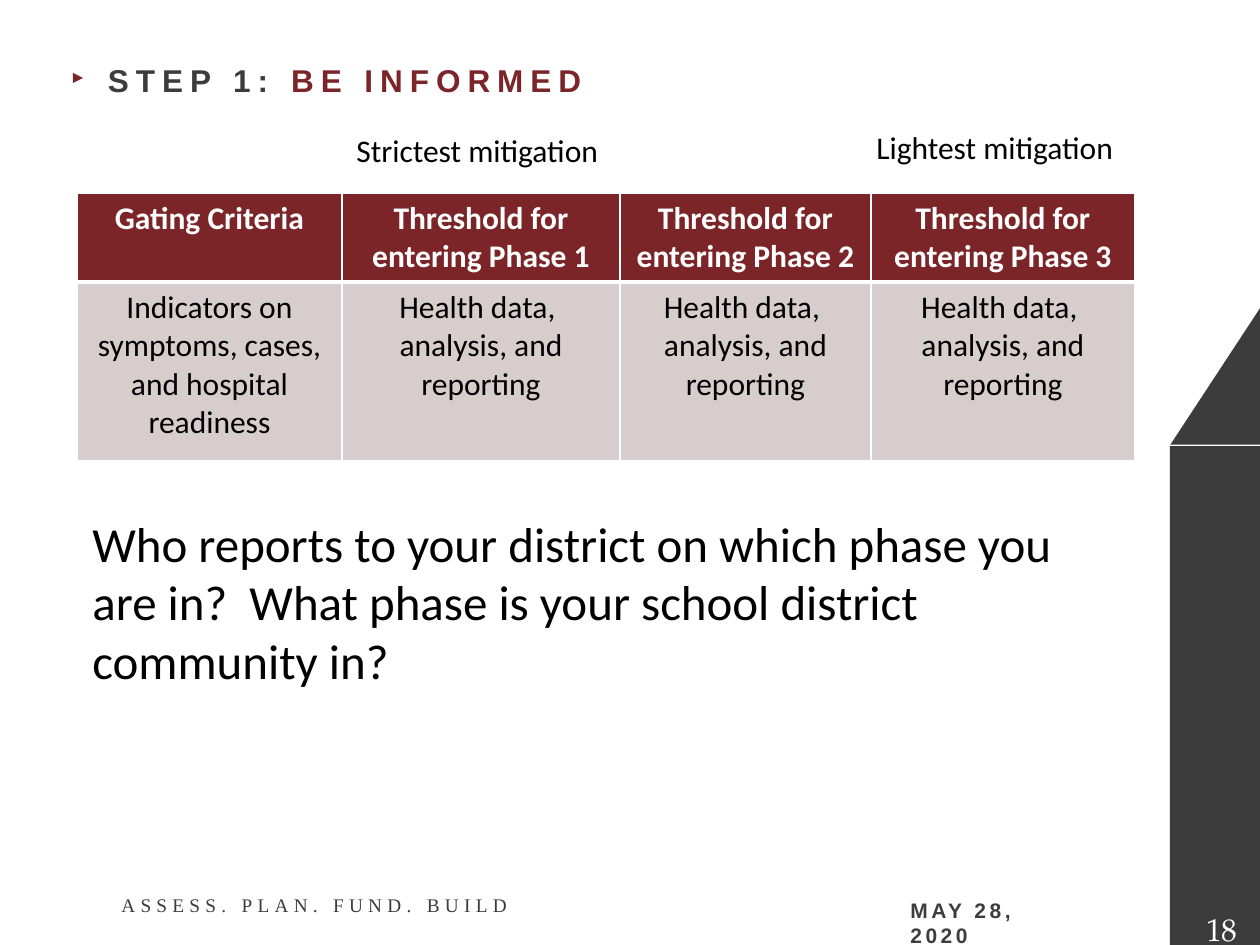
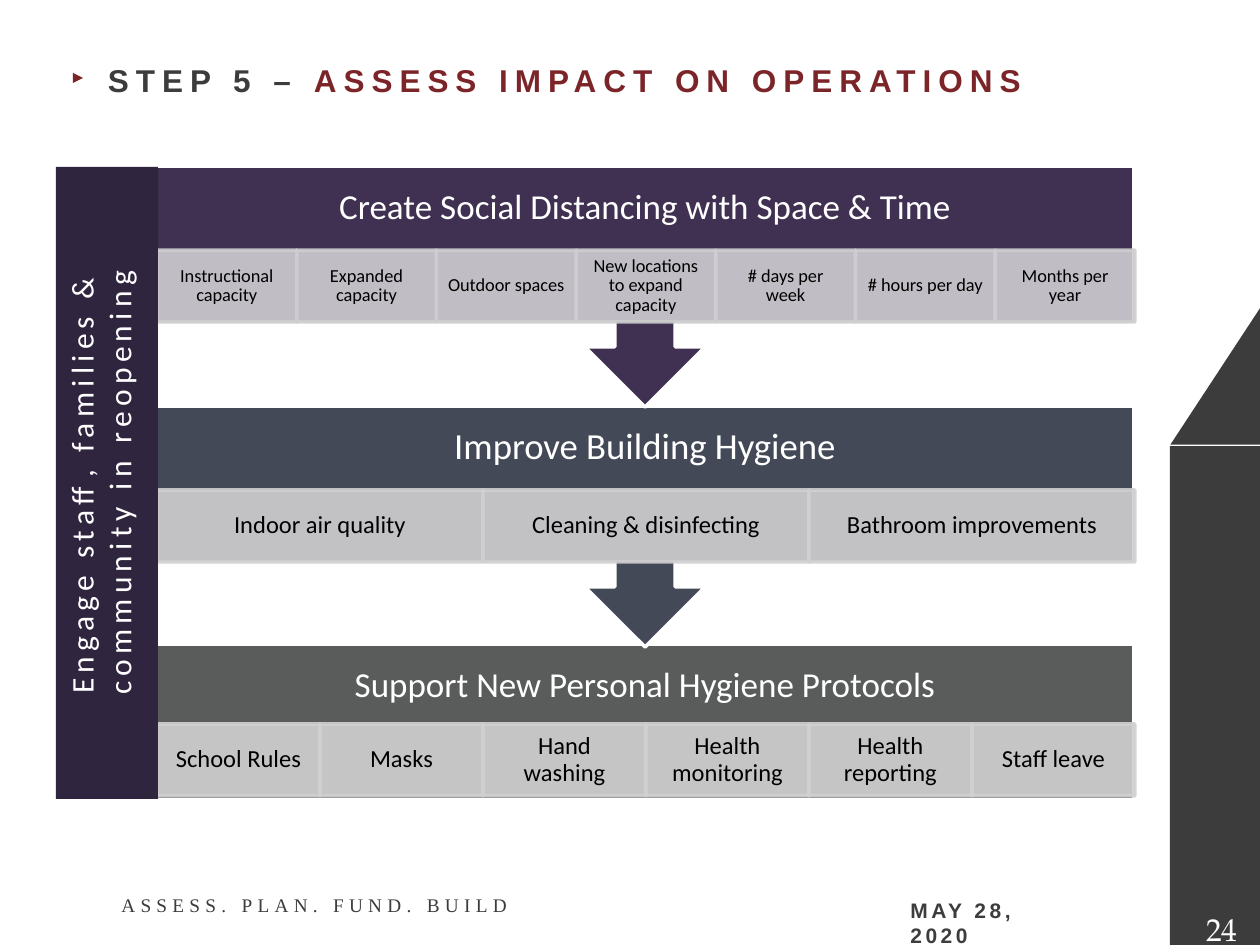
from dataclasses import dataclass

from lxml import etree
from pptx import Presentation
from pptx import util as u
from pptx.dml.color import RGBColor
from pptx.enum import shapes, text
from pptx.oxml import ns

PX_PER_INCH = 126
Shape = shapes.MSO_SHAPE
Align = text.PP_ALIGN
Anchor = text.MSO_ANCHOR


@dataclass(frozen=True)
class Theme:
    charcoal: str = "3D3C3D"
    date_grey: str = "3C3D3C"
    maroon: str = "7C2529"
    blush: str = "D7CDCD"
    white: str = "FFFFFF"
    black: str = "000000"
    aubergine: str = "30253E"
    purple: str = "403152"
    slate: str = "444958"
    grey: str = "5A5B5B"
    heading_font: str = "Arial"
    body_font: str = "Calibri"
    footer_font: str = "Times New Roman"
    number_font: str = "TeX Gyre Pagella"
    motto_size: float = 11
    date_size: float = 12
    body_size: float = 18
    question_size: float = 28


THEME = Theme()


@dataclass(frozen=True)
class Style:
    size: float = THEME.body_size
    color: str = THEME.black
    font: str = THEME.body_font
    bold: bool = False
    tracking: int = 0  # points between letters


@dataclass(frozen=True)
class Stage:
    heading: str
    heading_size: float
    color: str
    top: int
    height: int
    cells_offset: int
    cell_color: str
    cell_size: float
    cell_inset: int
    cells: tuple
    leads_on: bool = True


STAGES = (
    Stage("Create Social Distancing with Space & Time", 20, THEME.purple,
          166, 241, 84, "CECED1", 10.5, 11,
          ("Instructional capacity", "Expanded capacity", "Outdoor spaces",
           "New locations to expand capacity", "# days per week",
           "# hours per day", "Months per year")),
    Stage("Improve Building Hygiene", 21, THEME.slate,
          406, 241, 84, "D0D0D1", 14, 14,
          ("Indoor air quality", "Cleaning & disinfecting",
           "Bathroom improvements")),
    Stage("Support New Personal Hygiene Protocols", 20, THEME.grey,
          644, 156, 80, "D1D1D1", 14, 14,
          ("School Rules", "Masks", "Hand washing", "Health monitoring",
           "Health reporting", "Staff leave"), leads_on=False),
)


def px(length):
    return u.Emu(round(length * 914400 / PX_PER_INCH))


def rgb(color):
    return RGBColor.from_string(color)


def add_run(paragraph, words, style):
    run = paragraph.add_run()
    run.text = words
    font = run.font
    font.size = u.Pt(style.size)
    font.name = style.font
    font.bold = style.bold
    font.color.rgb = rgb(style.color)
    if style.tracking:
        font._element.set("spc", str(style.tracking * 100))


def write(frame, runs, align=Align.LEFT, anchor=Anchor.TOP, insets=None,
          wrap=True, spacing=None):
    """Fill a frame with one paragraph of (words, style) runs."""
    frame.word_wrap = wrap
    frame.vertical_anchor = anchor
    if insets:
        across, down = insets
        frame.margin_left = frame.margin_right = px(across)
        frame.margin_top = frame.margin_bottom = px(down)
    paragraph = frame.paragraphs[0]
    paragraph.alignment = align
    if spacing:
        paragraph.line_spacing = spacing
    for words, style in runs:
        add_run(paragraph, words, style)


def add_text(slide, box, runs, **layout):
    label = slide.shapes.add_textbox(*map(px, box))
    write(label.text_frame, runs, **layout)


def add_block(slide, kind, box, color, line=None, rotation=0, opacity=None):
    block = slide.shapes.add_shape(kind, *map(px, box))
    block.shadow.inherit = False
    block.rotation = rotation
    block.fill.solid()
    block.fill.fore_color.rgb = rgb(color)
    if line:
        block.line.color.rgb = rgb(line)
        block.line.width = u.Pt(2)
    else:
        block.line.fill.background()
    if opacity:
        for tint in block._element.spPr.iter(ns.qn("a:srgbClr")):
            etree.SubElement(tint, ns.qn("a:alpha"), val=str(opacity * 1000))
    return block


def add_frame(slide, step, topic, number):
    """Draw the band, footer and heading that the slides share."""
    # Side band
    add_block(slide, Shape.RECTANGLE, (1170, 446, 90, 499), THEME.charcoal)
    add_block(slide, Shape.RIGHT_TRIANGLE, (1147, 331, 137, 90),
              THEME.charcoal, rotation=270)
    # Footer
    motto = Style(THEME.motto_size, THEME.charcoal, THEME.footer_font,
                  tracking=3)
    add_text(slide, (109, 887, 431, 36),
             [("ASSESS. PLAN. FUND. BUILD", motto)])
    date = Style(THEME.date_size, THEME.date_grey, THEME.heading_font, True, 2)
    add_text(slide, (898, 891, 188, 37), [("MAY 28, 2020", date)])
    page = Style(color=THEME.white, font=THEME.number_font)
    add_text(slide, (1187, 903, 63, 51), [(number, page)],
             align=Align.RIGHT, anchor=Anchor.MIDDLE)
    # Heading
    add_block(slide, Shape.ISOSCELES_TRIANGLE, (73, 73, 10, 10),
              THEME.maroon, rotation=90)
    heading = [(words, Style(color=color, font=THEME.heading_font,
                             bold=True, tracking=4))
               for words, color in ((step, THEME.charcoal),
                                    (topic, THEME.maroon))]
    add_text(slide, (95, 52, 1124, 73), heading, insets=(13, 9))


def set_borders(cell, bottom):
    properties = cell._tc.get_or_add_tcPr()
    widths = {"lnL": 1, "lnR": 1, "lnT": 1, "lnB": bottom}
    for place, (side, width) in enumerate(widths.items()):
        edge = etree.Element(ns.qn(f"a:{side}"), w=str(u.Pt(width)))
        fill = etree.SubElement(edge, ns.qn("a:solidFill"))
        etree.SubElement(fill, ns.qn("a:srgbClr"), val=THEME.white)
        properties.insert(place, edge)


def add_criteria_table(slide, left, top, widths, heights, rows):
    criteria = slide.shapes.add_table(
        len(rows), len(widths), px(left), px(top),
        px(sum(widths)), px(sum(heights))).table
    for column, width in zip(criteria.columns, widths):
        column.width = px(width)
    for r, (height, row) in enumerate(zip(heights, rows)):
        criteria.rows[r].height = px(height)
        header = r == 0
        style = Style(color=THEME.white if header else THEME.black,
                      bold=header)
        for c, words in enumerate(row):
            cell = criteria.cell(r, c)
            cell.fill.solid()
            cell.fill.fore_color.rgb = rgb(
                THEME.maroon if header else THEME.blush)
            set_borders(cell, bottom=3 if header else 1)
            paragraph = cell.text_frame.paragraphs[0]
            paragraph.alignment = Align.CENTER
            add_run(paragraph, words, style)


def add_stage(slide, stage, left=156, width=978):
    """Draw a heading bar, its row of cells and the arrow to the next stage."""
    kind = Shape.UP_ARROW_CALLOUT if stage.leads_on else Shape.RECTANGLE
    add_block(slide, kind, (left, stage.top, width, stage.height),
              stage.color, line=THEME.white,
              rotation=180 if stage.leads_on else 0)
    add_text(slide, (left, stage.top, width, 84),
             [(stage.heading, Style(stage.heading_size, THEME.white))],
             align=Align.CENTER, anchor=Anchor.MIDDLE, insets=(20, 20),
             spacing=0.9)
    step = width / len(stage.cells)
    for i, words in enumerate(stage.cells):
        cell = add_block(
            slide, Shape.RECTANGLE,
            (left + 1 + i * step, stage.top + stage.cells_offset, step, 72),
            stage.cell_color, line=stage.cell_color, opacity=90)
        write(cell.text_frame, [(words, Style(stage.cell_size))],
              align=Align.CENTER, anchor=Anchor.MIDDLE,
              insets=(stage.cell_inset, 3), spacing=0.9)


def build_informed(slide):
    add_frame(slide, "STEP 1: ", "BE INFORMED", "18")
    # Gating criteria by phase
    phases = [f"Threshold for entering Phase {n}" for n in (1, 2, 3)]
    add_criteria_table(
        slide, 77, 193, (265, 278, 251, 264), (89, 179),
        (["Gating Criteria", *phases],
         ["Indicators on symptoms, cases, and hospital readiness",
          *["Health data,  analysis, and reporting"] * len(phases)]))
    # Ends of the mitigation scale
    for words, left, top, width in (("Strictest mitigation", 344, 125, 270),
                                    ("Lightest mitigation", 864, 122, 265)):
        add_text(slide, (left, top, width, 51), [(words, Style())], wrap=False)
    # Question to the district
    add_text(slide, (80, 507, 1040, 190),
             [("Who reports to your district on which phase you are in?  "
               "What phase is your school district community in?",
               Style(THEME.question_size))])


def build_operations(slide):
    add_frame(slide, "STEP 5 – ", "ASSESS IMPACT ON OPERATIONS", "24")
    # Stages from the last up, so that each arrow lies over the next bar
    for stage in reversed(STAGES):
        add_stage(slide, stage)
    # Engagement bar beside all stages
    engagement = add_block(slide, Shape.RECTANGLE, (56, 167, 102, 632),
                           THEME.aubergine)
    write(engagement.text_frame,
          [("Engage staff, families & community in reopening",
            Style(color=THEME.white, tracking=3))], align=Align.CENTER)
    engagement.text_frame._txBody.bodyPr.set("vert", "vert270")


def main():
    deck = Presentation()
    deck.slide_width, deck.slide_height = px(1260), px(945)
    blank = deck.slide_layouts[6]
    for build in (build_informed, build_operations):
        build(deck.slides.add_slide(blank))
    deck.save("out.pptx")


if __name__ == "__main__":
    main()
